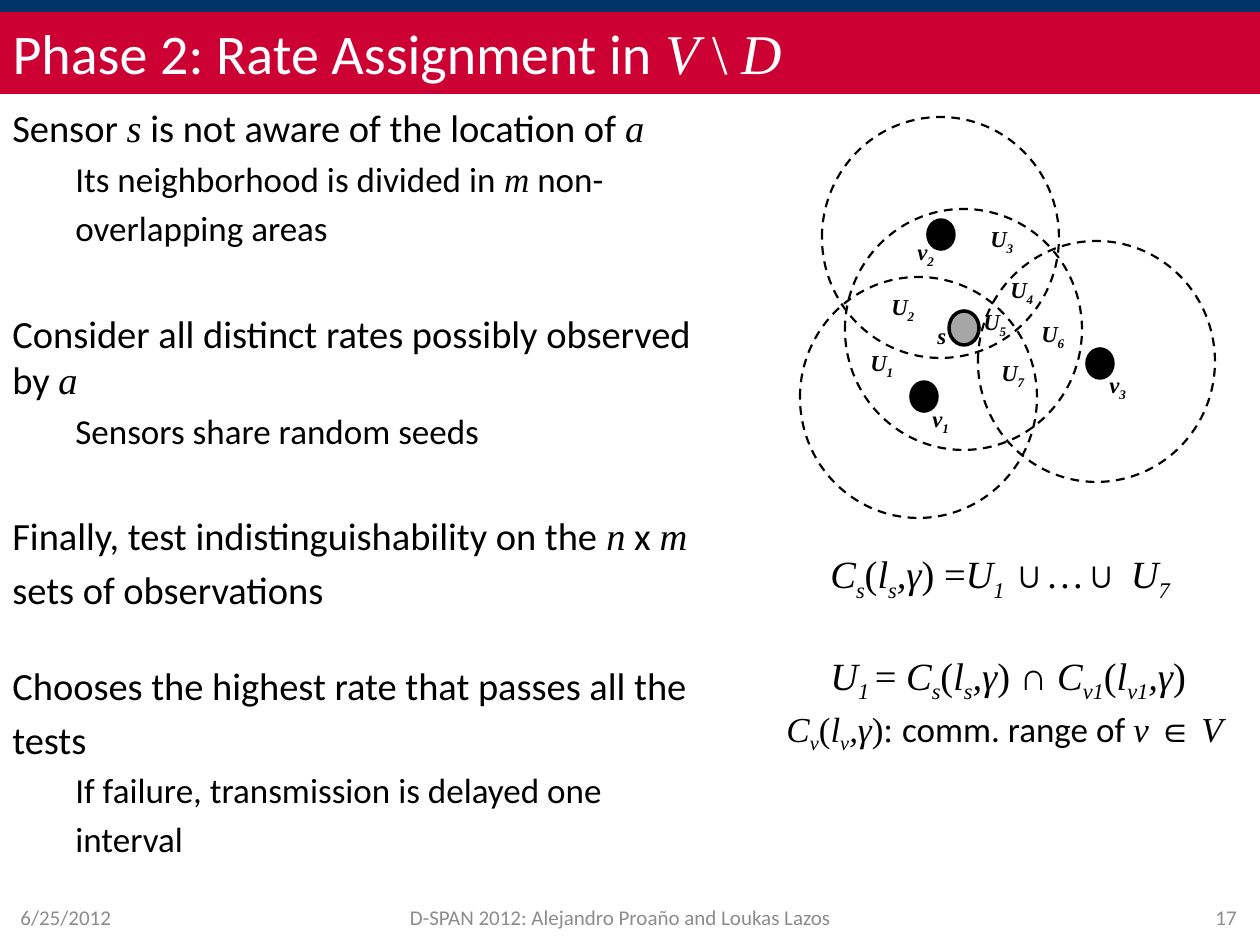
"""Build the slide on rate assignment for sensors outside the dominating set."""
from pptx import Presentation
from pptx.dml.color import RGBColor
from pptx.enum.dml import MSO_LINE
from pptx.enum.shapes import MSO_SHAPE as SHAPE
from pptx.enum.text import MSO_ANCHOR as ANCHOR, MSO_AUTO_SIZE as FIT, PP_ALIGN as ALIGN
from pptx.util import Emu, Pt

PX = 914400 / 126
COLORS = {name: RGBColor.from_string(value) for name, value in {
    "navy": "003366", "red": "CC0033", "white": "FFFFFF",
    "black": "000000", "sensor": "A6A6A6", "footer": "8C8C8C"}.items()}


def place(kind, left, top, width, height, fill=None, line="black", weight=2):
    """Add a preset shape, or a wrapping text box when kind is None."""
    box = [Emu(round(n * PX)) for n in (left, top, width, height)]
    if kind is None:
        part = slide.shapes.add_textbox(*box)
        part.text_frame.word_wrap = True
        return part
    part = slide.shapes.add_shape(kind, *box)
    part.shadow.inherit = False
    if fill:
        part.fill.solid()
        part.fill.fore_color.rgb = COLORS[fill]
    else:
        part.fill.background()
    part.line.color.rgb = COLORS[line]
    part.line.width = Pt(weight)
    return part


def write(paragraph, markup, size, color="black", bold=None):
    """Write pieces split by |, each led by p(lain), t(imes), i(talic) or s(ubscript)."""
    pieces = [(piece[0], piece[1:]) for piece in markup.split("|")]
    all_times = all(style != "p" for style, _ in pieces)
    font = paragraph.font
    font.name = "Times New Roman" if all_times else "Calibri"
    font.size, font.bold = Pt(size), bold
    font.color.rgb = COLORS[color]
    for style, words in pieces:
        run = paragraph.add_run()
        run.text = words
        if style != "p" and not all_times:
            run.font.name = "Times New Roman"
        if style in "is":
            run.font.italic = True
        if style == "s":
            run.font._element.set("baseline", "-25000")


deck = Presentation()
deck.slide_width, deck.slide_height = Emu(round(1260 * PX)), Emu(round(945 * PX))
slide = deck.slides.add_slide(deck.slide_layouts[5])

place(SHAPE.RECTANGLE, 0, 0, 1260, 10, "navy", "navy")
title = slide.shapes.title
title.left, title.top, title.width, title.height = [
    Emu(round(n * PX)) for n in (0, 10, 1260, 84)]
title.fill.solid()
title.fill.fore_color.rgb = COLORS["red"]
title.text_frame.auto_size = FIT.NONE
title.text_frame.vertical_anchor = ANCHOR.MIDDLE
heading = title.text_frame.paragraphs[0]
heading.alignment = ALIGN.LEFT
write(heading, "pPhase 2: Rate Assignment in |iV |t\\|i D", 32, "white")

steps = [
    (0, 0, "pSensor |is|p is not aware of the location of |ia"),
    (1, 4, "pIts neighborhood is divided in |im|p non-"),
    (1, 4, "poverlapping areas"),
    (0, 35, "pConsider all distinct rates possibly observed by |ia"),
    (1, 4, "pSensors share random seeds"),
    (0, 35, "pFinally, test indistinguishability on the |in|p x |im"),
    (0, 4, "psets of observations"),
    (0, 29, "pChooses the highest rate that passes all the"),
    (0, 4, "ptests"),
    (1, 4, "pIf failure, transmission is delayed one"),
    (1, 4, "pinterval"),
]
argument = place(None, 0, 98, 707, 762).text_frame
for number, (level, gap, markup) in enumerate(steps):
    step = argument.add_paragraph() if number else argument.paragraphs[0]
    step.space_before = Pt(gap)
    if level:
        step.level = level
        step._p.get_or_add_pPr().set("marL", str(round(63 * PX)))
    write(step, markup, 20 if level else 22)

for left, width, alignment, words in [
        (8, 294, ALIGN.LEFT, "6/25/2012"),
        (955, 294, ALIGN.RIGHT, "17"),
        (387, 467, ALIGN.CENTER, "D-SPAN 2012: Alejandro Proaño and Loukas Lazos")]:
    footer = place(None, left, 892, width, 50).text_frame
    footer.vertical_anchor = ANCHOR.MIDDLE
    footer.paragraphs[0].alignment = alignment
    write(footer.paragraphs[0], "p" + words, 12, "footer")

for left, top in [(1087, 349), (928, 220), (911, 382)]:
    place(SHAPE.OVAL, left, top, 26, 29, "black")
place(SHAPE.OVAL, 949, 311, 30, 34, "sensor")
for left, top in [(845, 209), (800, 277), (822, 117), (978, 241)]:
    comm_range = place(SHAPE.OVAL, left, top, 237, 241, weight=1.25)
    comm_range.line.dash_style = MSO_LINE.DASH

for markup, left, top in [
        ("iv|s1", 920, 399), ("iv|s2", 905, 232), ("iv|s3", 1097, 365), ("is", 925, 316),
        ("iU|s1", 858, 343), ("iU|s2", 879, 287), ("iU|s3", 978, 219), ("iU|s4", 998, 270),
        ("iU|s5", 971, 302), ("iU|s6", 1029, 314), ("iU|s7", 989, 353)]:
    width = {"U": 52, "v": 44, "s": 34}[markup[1]]
    label = place(None, left, top, width, 40).text_frame
    write(label.paragraphs[0], markup, 13, bold=True)

sets = place(None, 818, 544, 411, 137).text_frame
write(sets.paragraphs[0], "iC|ss|t(|il|ss|i,γ|t) =|iU|s1 |t∪|i…|t∪|i U|s7", 22)
overlap = sets.add_paragraph()
overlap.space_before = Pt(28)
write(overlap, "iU|s1 |t= |iC|ss|t(|il|ss|i,γ|t) ∩ |iC|sv1|t(|il|sv1|i,γ|t)", 22)

legend = place(None, 774, 701, 462, 55).text_frame
legend.word_wrap = False
write(legend.paragraphs[0], "iC|sv|t(|il|sv|i,γ|t): |pcomm. range of |iv ∈ V", 20)

deck.save("out.pptx")
